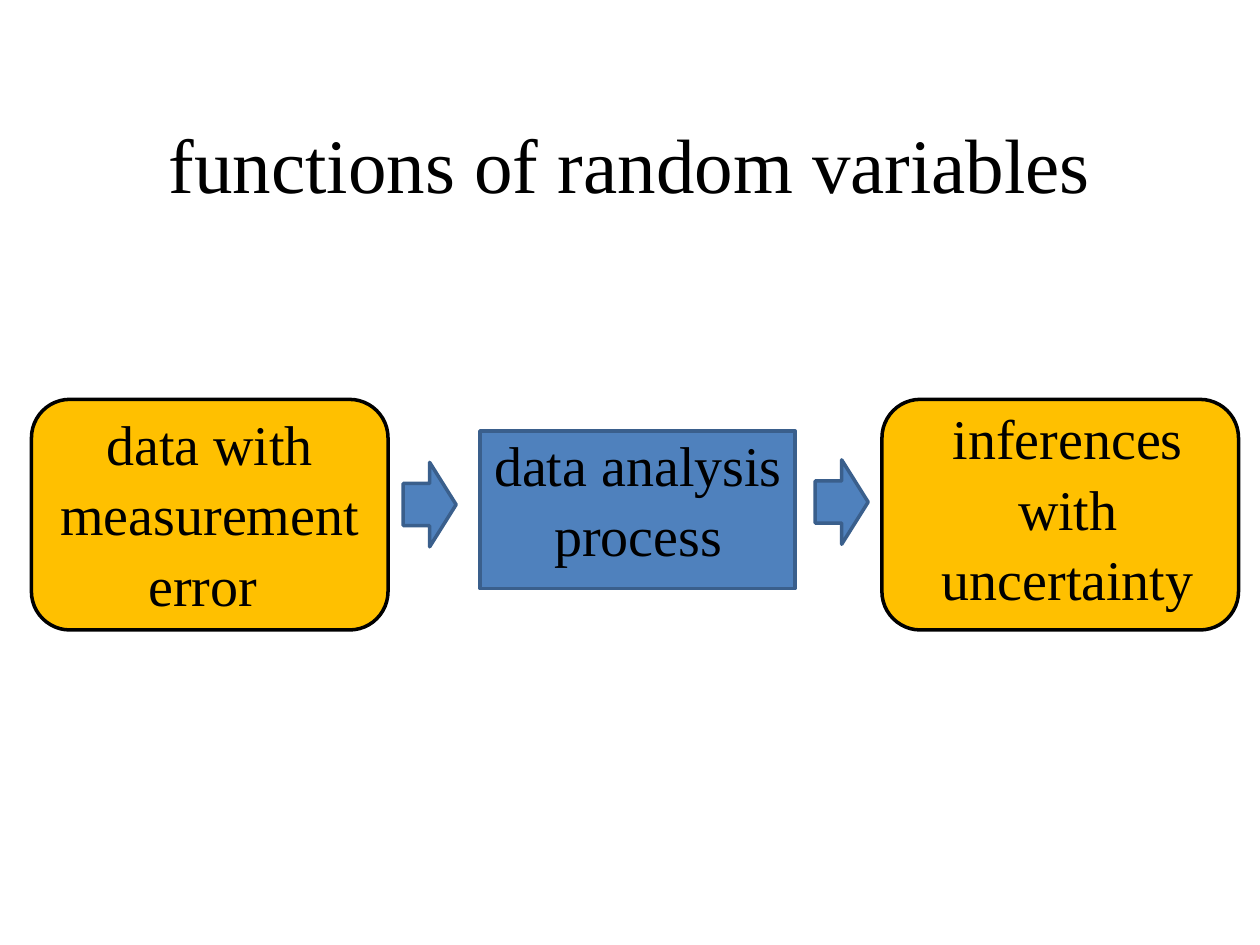
from dataclasses import dataclass

from pptx import Presentation, util as u
from pptx.dml.color import RGBColor
from pptx.enum import shapes, text
from pptx.oxml import xmlchemy

FONT = {"name": "Times New Roman"}
FRAME = {"word_wrap": True, "auto_size": text.MSO_AUTO_SIZE.NONE}
STEP_TEXT = {
    "alignment": text.PP_ALIGN.CENTER,
    "line_spacing": 1.05,
    "space_before": u.Pt(0),
}


@dataclass
class Box:
    left: float
    top: float
    width: float
    height: float

    def lengths(self) -> list:
        return [u.Inches(v) for v in (self.left, self.top, self.width, self.height)]


@dataclass
class Block:
    preset: int
    box: Box
    fill: str
    line: str


def rounded(left: float) -> Block:
    box = Box(left, 3.17, 2.83, 1.83)
    return Block(shapes.MSO_SHAPE.ROUNDED_RECTANGLE, box, "FFC000", "000000")


def arrow(left: float, top: float) -> Block:
    box = Box(left, top, 0.42, 0.67)
    return Block(shapes.MSO_SHAPE.RIGHT_ARROW, box, "4F81BD", "3A5F8C")


PROCESS = Block(shapes.MSO_SHAPE.RECTANGLE, Box(3.81, 3.42, 2.5, 1.25), "4F81BD", "3A5F8C")
PANELS = [PROCESS, rounded(7), rounded(0.25)]
ARROWS = [arrow(3.2, 3.67), arrow(6.47, 3.65)]
CAPTIONS = [
    ("data analysis process", Box(3.73, 3.34, 2.67, 1.92)),
    ("inferences with uncertainty", Box(7.14, 3.13, 2.67, 1.92)),
]


def assign(target, values: dict) -> None:
    for key, value in values.items():
        setattr(target, key, value)


def color(hex_string: str) -> RGBColor:
    return RGBColor.from_string(hex_string)


def draw_block(slide, block: Block) -> None:
    shape = slide.shapes.add_shape(block.preset, *block.box.lengths())
    shape.shadow.inherit = False
    shape.fill.solid()
    shape.fill.fore_color.rgb = color(block.fill)
    shape.line.color.rgb = color(block.line)
    shape.line.width = u.Pt(2)


def write(holder, words: str, box: Box, size: float, paragraph_format: dict,
          anchor=text.MSO_ANCHOR.TOP) -> None:
    assign(holder, dict(zip(("left", "top", "width", "height"), box.lengths())))
    assign(holder.text_frame, FRAME | {"vertical_anchor": anchor})
    paragraph = holder.text_frame.paragraphs[0]
    assign(paragraph, paragraph_format)
    run = paragraph.add_run()
    run.text = words
    assign(run.font, FONT | {"size": u.Pt(size)})
    run.font.color.rgb = color("000000")


def remove_bullet(holder) -> None:
    properties = holder.text_frame.paragraphs[0]._p.get_or_add_pPr()
    properties.set("marL", "0")
    properties.set("indent", "0")
    properties.append(xmlchemy.OxmlElement("a:buNone"))


def main() -> None:
    deck = Presentation()
    assign(deck, {"slide_width": u.Inches(10), "slide_height": u.Inches(7.5)})
    slide = deck.slides.add_slide(deck.slide_layouts[1])
    title, data = slide.placeholders

    for panel in PANELS:
        draw_block(slide, panel)

    for holder in (title, data):
        slide.shapes._spTree.append(holder._element)
    write(title, "functions of random variables", Box(0.5, 0.67, 9, 1.25), 44,
          {"alignment": text.PP_ALIGN.CENTER}, text.MSO_ANCHOR.MIDDLE)
    write(data, "data with measurement error ", Box(0.33, 3.17, 2.67, 1.92), 32, STEP_TEXT)
    remove_bullet(data)

    for words, box in CAPTIONS:
        write(slide.shapes.add_textbox(*box.lengths()), words, box, 32, STEP_TEXT)
    for step in ARROWS:
        draw_block(slide, step)

    deck.save("out.pptx")


if __name__ == "__main__":
    main()
